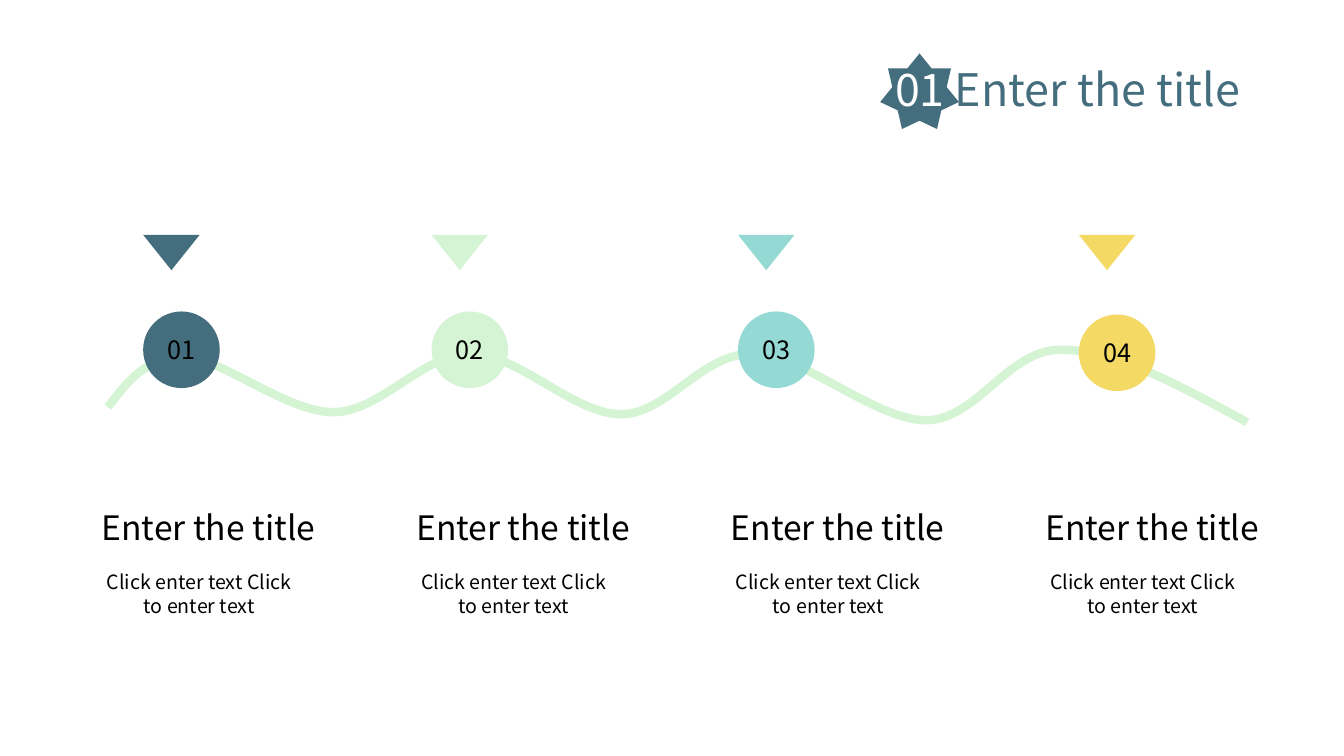
"""Build a four-step timeline slide along a wavy line."""
import pptx
import pptx.dml.color
import pptx.enum.shapes
import pptx.enum.text
import pptx.oxml.ns
import pptx.util

RGB = pptx.dml.color.RGBColor
KIND = pptx.enum.shapes.MSO_SHAPE
ALIGN = pptx.enum.text.PP_ALIGN
PX = 9144
FONT = "Noto Sans CJK SC"
BLACK = RGB(0, 0, 0)
WHITE = RGB(255, 255, 255)
SLATE = RGB(0x44, 0x6E, 0x7E)
MINT = RGB(0xD5, 0xF4, 0xD3)
TEAL = RGB(0x94, 0xD9, 0xD4)
GOLD = RGB(0xF4, 0xD9, 0x64)
STEPS = [(142, 309, SLATE), (428, 309, MINT), (732, 309, TEAL), (1070, 312, GOLD)]
WAVE = [
    (107, 404), (126, 379), (145, 354), (182, 354),
    (220, 355), (284, 409), (331, 409),
    (379, 408), (419, 351), (467, 351),
    (514, 351), (569, 411), (616, 411),
    (662, 411), (696, 350), (747, 351),
    (797, 352), (868, 417), (919, 417),
    (970, 416), (1000, 346), (1053, 347),
    (1106, 347), (1171, 383), (1237, 419),
]


def scale(*box):
    """Turn px lengths into EMU."""
    return [n * PX for n in box]


def add_shape(shapes, kind, box, color):
    """Add a flat filled shape without outline."""
    shape = shapes.add_shape(kind, *scale(*box))
    shape.shadow.inherit = False
    shape.fill.solid()
    shape.fill.fore_color.rgb = color
    shape.line.fill.background()
    return shape


def write(shape, parts, size, align):
    """Write one paragraph of (text, color) runs."""
    par = shape.text_frame.paragraphs[0]
    par.alignment = align
    par.font.name = FONT
    par.font.size = pptx.util.Pt(size)
    for text, color in parts:
        run = par.add_run()
        run.text = text
        run.font.color.rgb = color


def add_text(shapes, box, parts, size, align=ALIGN.LEFT):
    """Add a wrapping text box that grows with its text."""
    label = shapes.add_textbox(*scale(*box))
    label.text_frame.word_wrap = True
    label.text_frame.auto_size = pptx.enum.text.MSO_AUTO_SIZE.SHAPE_TO_FIT_TEXT
    write(label, parts, size, align)


def add_wave(shapes):
    """Draw the wave, each three points making one cubic curve."""
    pen = shapes.build_freeform(*WAVE[0], scale=PX)
    pen.add_line_segments(WAVE[1:], close=False)
    wave = pen.convert_to_shape()
    wave.shadow.inherit = False
    wave.fill.background()
    wave.line.color.rgb = MINT
    wave.line.width = pptx.util.Pt(6)
    qn = pptx.oxml.ns.qn
    lines = list(wave.element.iter(qn("a:lnTo")))
    for i in range(0, len(lines), 3):
        curve = lines[i].makeelement(qn("a:cubicBezTo"), {})
        lines[i].addprevious(curve)
        for line in lines[i:i + 3]:
            curve.append(line[0])
            line.getparent().remove(line)


def add_head(shapes):
    """Add the star and the slide title as a group."""
    group = shapes.add_group_shape().shapes
    add_shape(group, KIND.STAR_7_POINT, (873, 53, 78, 75), SLATE)
    parts = [("01 ", WHITE), ("Enter the title", SLATE)]
    add_text(group, (878, 56, 416, 64), parts, 32)


def add_step(shapes, i, left, top, color):
    """Add one numbered circle with its marker and texts."""
    disc = add_shape(shapes, KIND.OVAL, (left, top, 76, 76), color)
    disc.text_frame.vertical_anchor = pptx.enum.text.MSO_ANCHOR.MIDDLE
    write(disc, [(f"{i + 1:02}", BLACK)], 18, ALIGN.CENTER)
    mark = add_shape(shapes, KIND.ISOSCELES_TRIANGLE, (left, 233, 56, 35), color)
    mark.rotation = 180
    x = 91 + 312 * i
    body = [("Click enter text Click to enter text", BLACK)]
    add_text(shapes, (x + 3, 561, 207, 57), body, 14, ALIGN.CENTER)
    add_text(shapes, (x, 498, 279, 50), [("Enter the title", BLACK)], 24)


def main():
    """Build and save the slide."""
    deck = pptx.Presentation()
    deck.slide_width, deck.slide_height = scale(1333, 750)
    shapes = deck.slides.add_slide(deck.slide_layouts[6]).shapes
    add_head(shapes)
    add_wave(shapes)
    for i, step in enumerate(STEPS):
        add_step(shapes, i, *step)
    deck.save("out.pptx")


if __name__ == "__main__":
    main()
